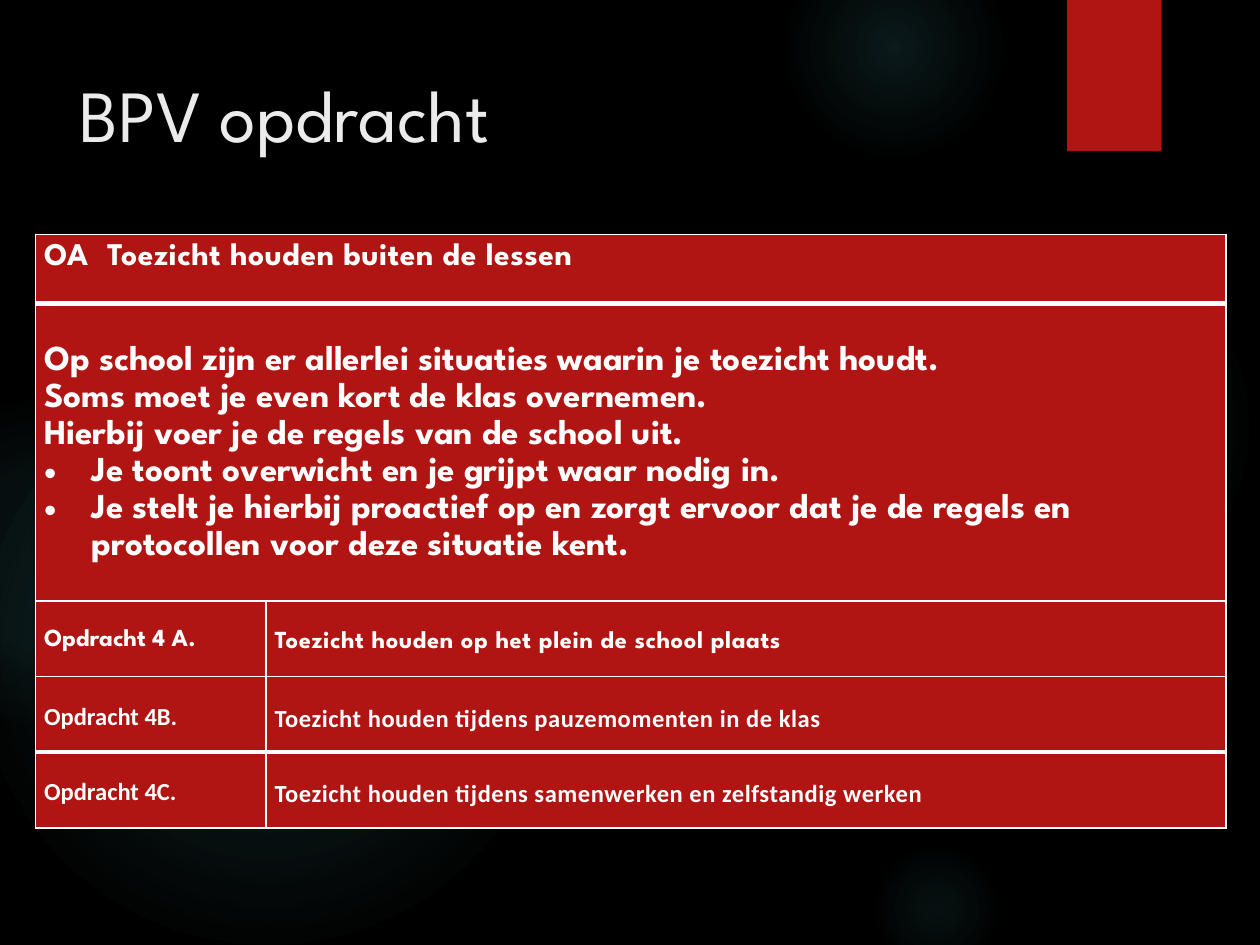
from dataclasses import dataclass

from pptx import Presentation
from pptx.dml.color import RGBColor as Rgb
from pptx.enum.shapes import MSO_SHAPE as Shape
from pptx.enum.text import MSO_ANCHOR as Anchor, MSO_AUTO_SIZE as Fit, PP_ALIGN as Align
from pptx.oxml import parse_xml
from pptx.oxml.ns import nsdecls
from pptx.util import Inches, Pt


@dataclass(frozen=True)
class Theme:
    """Colours, fonts and type sizes of the deck."""
    back: str = "000000"
    red: str = "B01513"
    glow: str = "50B9C1"
    pale: str = "EBEBEB"
    white: str = "FFFFFF"
    main: str = "League Spartan"
    plain: str = "Calibri"
    title: int = 42
    lead: int = 20
    head: int = 18
    task: int = 14


THEME = Theme()


def write(para, text, size=THEME.task, font=THEME.main, color=THEME.white,
          bold=True, track=0, line=None, after=None, bullet=False, stop=None):
    """Put formatted text in a paragraph."""
    para.alignment = Align.LEFT
    if line:
        para.line_spacing = line
    if after is not None:
        para.space_after = Pt(after)
    props = para._p.get_or_add_pPr()
    if bullet:
        hang = Inches(0.38)
        props.set("marL", str(hang))
        props.set("indent", str(-hang))
        props.append(parse_xml(f'<a:buFont {nsdecls("a")} typeface="Arial"/>'))
        props.append(parse_xml(f'<a:buChar {nsdecls("a")} char="•"/>'))
    if stop:
        props.append(parse_xml(
            f'<a:tabLst {nsdecls("a")}><a:tab pos="{Inches(stop)}" algn="l"/></a:tabLst>'))
    run = para.add_run()
    run.text = text
    run.font.size, run.font.name, run.font.bold = Pt(size), font, bold
    run.font.color.rgb = Rgb.from_string(color)
    if track:
        run._r.get_or_add_rPr().set("spc", str(round(track * 100)))


class Deck:
    """Holds the style and the current slide."""

    def __init__(self, theme):
        """Start a deck with one dark slide."""
        self.theme = theme
        self.show = Presentation()
        self.show.slide_width, self.show.slide_height = Inches(10), Inches(7.5)
        self.slide = self.show.slides.add_slide(self.show.slide_layouts[5])
        fill = self.slide.background.fill
        fill.solid()
        fill.fore_color.rgb = Rgb.from_string(theme.back)

    def shape(self, kind, *box):
        """Add a bare shape without line or shadow."""
        form = self.slide.shapes.add_shape(kind, *map(Inches, box))
        form.shadow.inherit = False
        form.line.fill.background()
        return form

    def glow(self, left, top, size, *stops):
        """Add a round glow that fades out."""
        orb = self.shape(Shape.OVAL, left, top, size, size)
        marks = "".join(
            f'<a:gs pos="{pos * 1000}"><a:srgbClr val="{self.theme.glow}">'
            f'<a:alpha val="{alpha * 1000}"/></a:srgbClr></a:gs>' for pos, alpha in stops)
        orb._element.spPr.insert(2, parse_xml(
            f'<a:gradFill {nsdecls("a")}><a:gsLst>{marks}</a:gsLst><a:path path="circle">'
            '<a:fillToRect l="50000" t="50000" r="50000" b="50000"/></a:path></a:gradFill>'))

    def block(self, *box):
        """Add a solid red block."""
        form = self.shape(Shape.RECTANGLE, *box)
        form.fill.solid()
        form.fill.fore_color.rgb = Rgb.from_string(self.theme.red)

    def title(self, text, *box):
        """Fill and place the title."""
        head = self.slide.shapes.title
        head.left, head.top, head.width, head.height = map(Inches, box)
        frame = head.text_frame
        frame.word_wrap, frame.auto_size = True, Fit.NONE
        frame.vertical_anchor = Anchor.TOP
        write(frame.paragraphs[0], text, self.theme.title, color=self.theme.pale, bold=False)

    def grid(self, left, top, cols, rows, thick):
        """Add a red table with white rules, thick under the given rows."""
        box = map(Inches, (left, top, sum(cols), sum(rows)))
        table = self.slide.shapes.add_table(len(rows), len(cols), *box).table
        table.first_row = table.horz_banding = False
        for col, width in zip(table.columns, cols):
            col.width = Inches(width)
        for num, (row, high) in enumerate(zip(table.rows, rows)):
            row.height = Inches(high)
            for cell in row.cells:
                self.frame(cell, 3 if num - 1 in thick else 1, 3 if num in thick else 1)
        return table

    def frame(self, cell, top, base):
        """Set the rules, fill and margins of a cell."""
        props = cell._tc.get_or_add_tcPr()
        for side, width in zip("LRTB", (1, 1, top, base)):
            props.append(parse_xml(
                f'<a:ln{side} {nsdecls("a")} w="{Pt(width)}"><a:solidFill>'
                f'<a:srgbClr val="{self.theme.white}"/></a:solidFill></a:ln{side}>'))
        cell.fill.solid()
        cell.fill.fore_color.rgb = Rgb.from_string(self.theme.red)
        cell.margin_left = cell.margin_right = Inches(0.07)
        cell.margin_top = cell.margin_bottom = 0
        cell.vertical_anchor = Anchor.MIDDLE


def main():
    """Build the slide."""
    deck = Deck(THEME)
    for left, top, size, *stops in (
            (6.89, 1.83, 3.08, (0, 7), (36, 6), (69, 0)),
            (6.22, -0.5, 1.75, (0, 14), (36, 7), (73, 0)),
            (6.89, 6.67, 1.08, (0, 9), (36, 5), (66, 0)),
            (-0.17, 2.92, 4.58, (0, 11), (36, 10), (75, 0)),
            (-0.92, 3.17, 2.58, (0, 8), (36, 8), (72, 0))):
        deck.glow(left, top, size, *stops)
    deck.block(8.47, 0, 0.75, 1.2)
    deck.title("BPV opdracht", 0.53, 0.5, 7.72, 1.53)

    table = deck.grid(0.28, 1.86, (1.83, 7.62), (0.55, 2.36, 0.6, 0.6, 0.6), thick=(0, 3))
    for row in (0, 1):
        table.cell(row, 0).merge(table.cell(row, 1))
    head = table.cell(0, 0)
    head.vertical_anchor = Anchor.TOP
    write(head.text_frame.paragraphs[0], "OA\tToezicht houden buiten de lessen",
          THEME.head, track=0.3, line=1.3, stop=0.5)

    lead = table.cell(1, 0).text_frame
    for num, (text, bullet) in enumerate((
            ("Op school zijn er allerlei situaties waarin je toezicht houdt.", False),
            ("Soms moet je even kort de klas overnemen.", False),
            ("Hierbij voer je de regels van de school uit.", False),
            ("Je toont overwicht en je grijpt waar nodig in.", True),
            ("Je stelt je hierbij proactief op en zorgt ervoor dat je de regels en "
             "protocollen voor deze situatie kent.", True))):
        para = lead.add_paragraph() if num else lead.paragraphs[0]
        write(para, text, THEME.lead, line=1.15, bullet=bullet)

    for row, (name, task, font) in enumerate((
            ("Opdracht 4 A.", "Toezicht houden op het plein de school plaats", THEME.main),
            ("Opdracht 4B.", "Toezicht houden tijdens pauzemomenten in de klas", THEME.plain),
            ("Opdracht 4C.", "Toezicht houden tijdens samenwerken en zelfstandig werken",
             THEME.plain)), start=2):
        write(table.cell(row, 0).text_frame.paragraphs[0], name, font=font, line=1.15)
        write(table.cell(row, 1).text_frame.paragraphs[0], task, font=font,
              track=0.3, line=1.3, after=10)
    deck.show.save("out.pptx")


if __name__ == "__main__":
    main()
